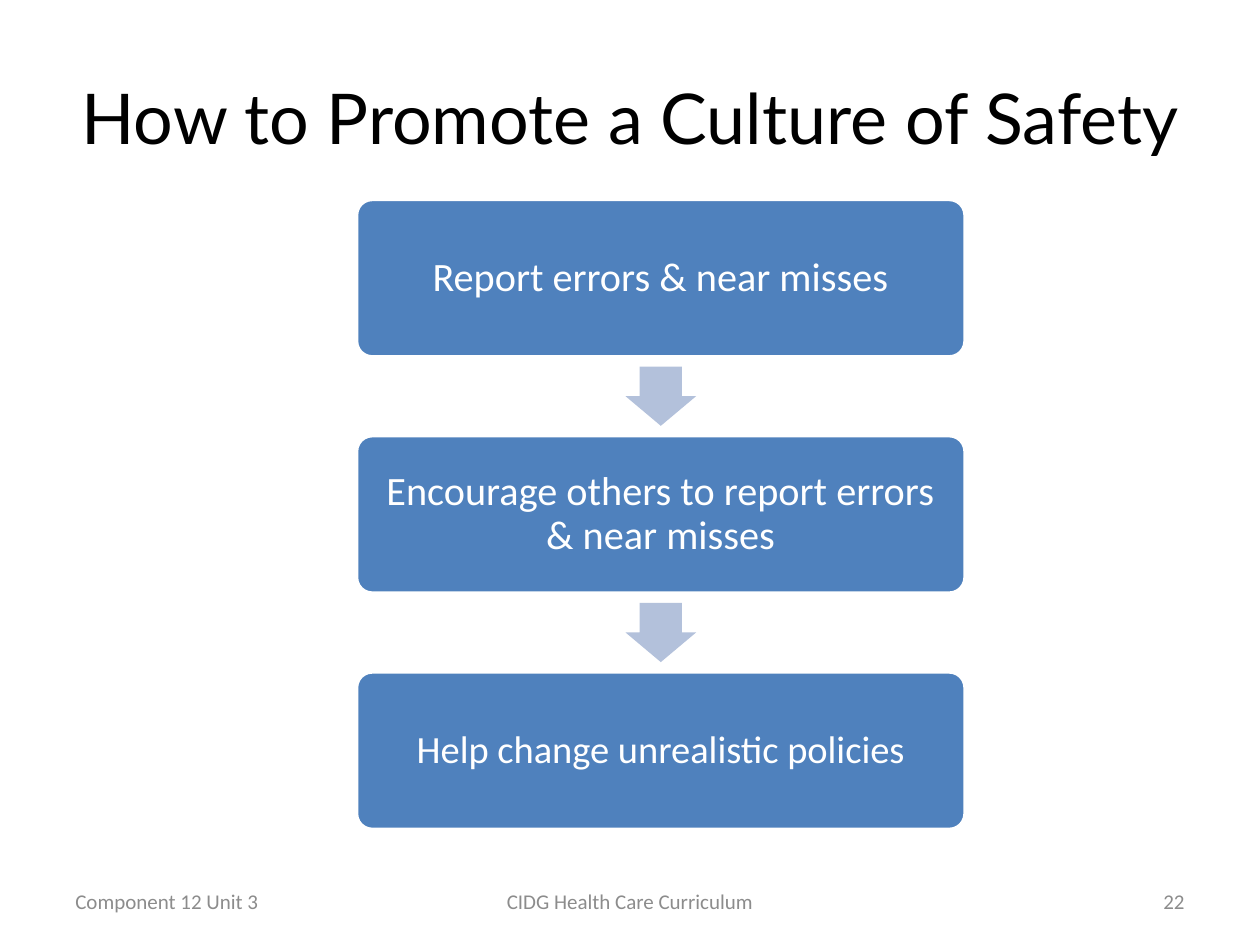
import pptx
import pptx.util
import pptx.dml.color
import pptx.enum.shapes
import pptx.enum.text

Inches = pptx.util.Inches
Kind = pptx.enum.shapes.MSO_SHAPE
Align = pptx.enum.text.PP_ALIGN

deck = pptx.Presentation()
deck.slide_width = Inches(10)
deck.slide_height = Inches(7.5)
wide, high = deck.slide_width, deck.slide_height
slide = deck.slides.add_slide(deck.slide_layouts[6])
shapes = slide.shapes


def paint(part, code):
    if hasattr(part, "solid"):
        part.solid()
        part = part.fore_color
    part.rgb = pptx.dml.color.RGBColor.from_string(code)


def write(shape, text, size=12, font="Calibri", color="8C8C8C",
          align=Align.CENTER, space=1.0, inset=None):
    frame = shape.text_frame
    frame.word_wrap = True
    frame.vertical_anchor = pptx.enum.text.MSO_ANCHOR.MIDDLE
    if inset is not None:
        frame.margin_left = frame.margin_right = Inches(inset)
        frame.margin_top = frame.margin_bottom = Inches(inset)
    para = frame.paragraphs[0]
    para.alignment = align
    para.line_spacing = space
    run = para.add_run()
    run.text = text
    run.font.size = pptx.util.Pt(size)
    run.font.name = font
    paint(run.font.color, color)


edge = wide // 20
title = shapes.add_textbox(edge, int(high * 0.04), wide - 2 * edge, high // 6)
write(title, "How to Promote a Culture of Safety", size=40, font="Lato", color="000000")

steps = [
    ("Report errors & near misses", 23, 0.1),
    ("Encourage others to report errors & near misses", 23, 0.1),
    ("Help change unrealistic policies", 22, 0.09),
]
left, top = int(wide * 0.283), int(high * 0.211)
broad, tall = int(wide * 0.483), high // 6
pitch = high // 4
span, drop = Inches(0.56), Inches(0.47)

for row, (text, size, inset) in enumerate(steps):
    y = top + row * pitch
    box = shapes.add_shape(Kind.ROUNDED_RECTANGLE, left, y, broad, tall)
    box.adjustments[0] = 0.1
    box.shadow.inherit = False
    paint(box.fill, "4F81BD")
    paint(box.line.fill, "FFFFFF")
    box.line.width = pptx.util.Pt(2)
    write(box, text, size=size, color="FFFFFF", space=0.9, inset=inset)
    if row < len(steps) - 1:
        arrow = shapes.add_shape(
            Kind.DOWN_ARROW, left + (broad - span) // 2,
            y + (tall + pitch - drop) // 2, span, drop)
        arrow.adjustments[0] = 0.6
        arrow.adjustments[1] = 0.5
        arrow.shadow.inherit = False
        paint(arrow.fill, "B3C1DB")
        arrow.line.fill.background()

side, mid = int(wide * 0.233), int(wide * 0.317)
notes = [
    ("Component 12 Unit 3", edge, side, Align.LEFT),
    ("CIDG Health Care Curriculum", (wide - mid) // 2, mid, Align.CENTER),
    ("22", wide - edge - side, side, Align.RIGHT),
]
for text, x, span, align in notes:
    foot = shapes.add_textbox(x, int(high * 0.927), span, Inches(0.4))
    write(foot, text, align=align)

deck.save("out.pptx")
